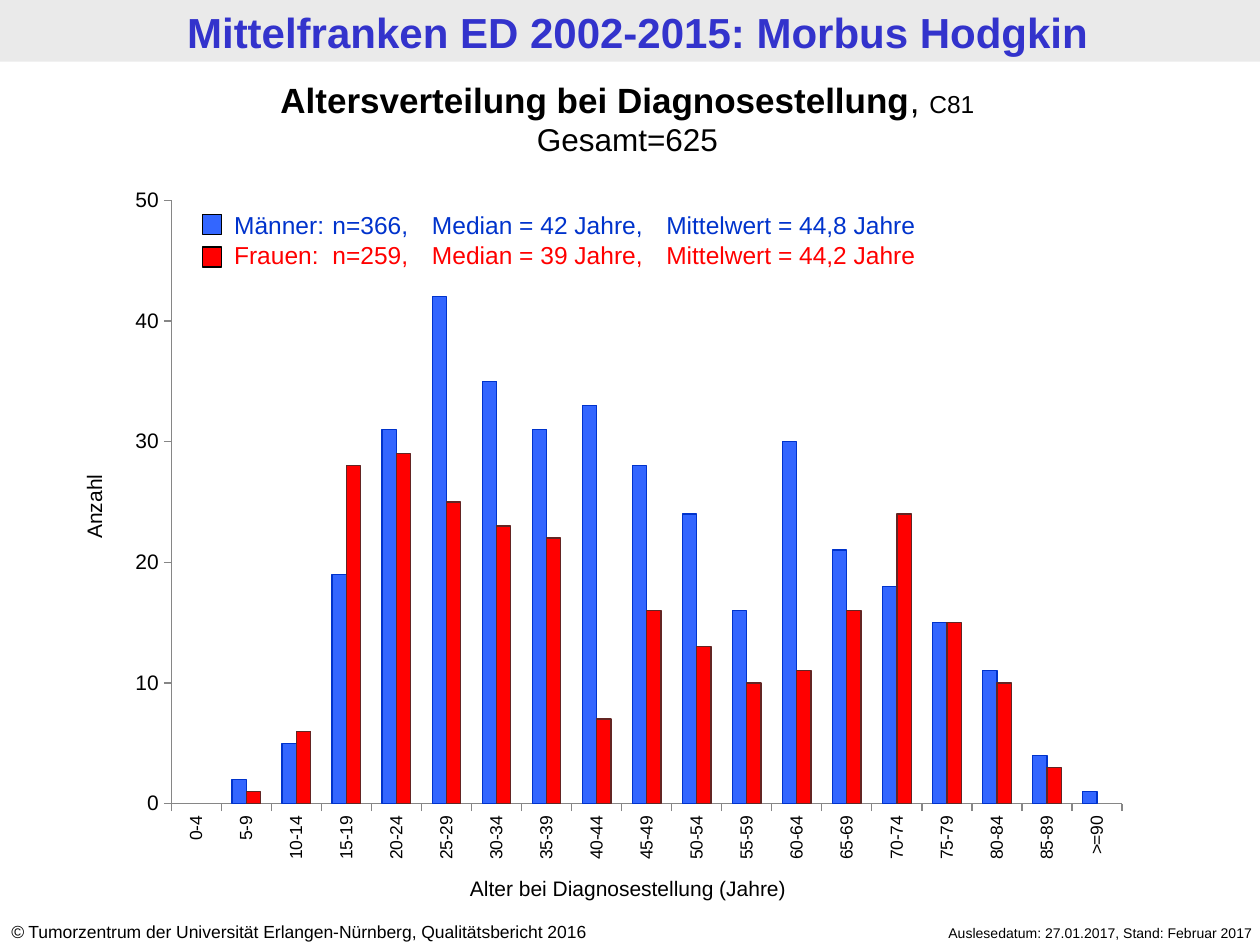
"""Build the slide on the age distribution at diagnosis of Morbus Hodgkin."""
import pptx
import pptx.chart.data
import pptx.dml.color
import pptx.enum.chart
import pptx.enum.shapes
import pptx.enum.text
import pptx.oxml
import pptx.oxml.ns
import pptx.util

Inches, Pt = pptx.util.Inches, pptx.util.Pt
ALIGN = pptx.enum.text.PP_ALIGN
BLUE, RED, BLACK = "3366FF", "FF0000", "000000"


def rgb(value):
    return pptx.dml.color.RGBColor.from_string(value)


def write(sp, box, paragraphs, align=ALIGN.LEFT):
    sp.left, sp.top, sp.width, sp.height = [Inches(v) for v in box]
    tf = sp.text_frame
    tf.word_wrap = True
    tf.auto_size = pptx.enum.text.MSO_AUTO_SIZE.NONE
    tf.vertical_anchor = pptx.enum.text.MSO_ANCHOR.TOP
    for i, runs in enumerate(paragraphs):
        p = tf.add_paragraph() if i else tf.paragraphs[0]
        p.alignment = align
        for text, size, color, bold, italic in runs:
            r = p.add_run()
            r.text = text
            r.font.name, r.font.size = "Arial", Pt(size)
            r.font.bold, r.font.italic = bold, italic
            r.font.color.rgb = rgb(color)
    return sp


prs = pptx.Presentation()
prs.slide_width, prs.slide_height = Inches(10), Inches(7.5)
s = prs.slides.add_slide(prs.slide_layouts[5])

band = s.shapes.add_shape(pptx.enum.shapes.MSO_SHAPE.RECTANGLE, 0, 0, prs.slide_width, Inches(0.49))
band.shadow.inherit = False
band.fill.solid()
band.fill.fore_color.rgb = rgb("EAEAEA")
band.line.fill.background()
s.shapes.title._element.addprevious(band._element)

title = write(s.shapes.title, (0.06, 0.01, 10, 0.49),
              [[("Mittelfranken ED 2002-2015: Morbus Hodgkin", 24, "3333CC", True, False)]], ALIGN.CENTER)
title.text_frame.margin_top = title.text_frame.margin_bottom = Inches(0.04)

labels = [
    ((-0.01, 7.26, 5.24, 0.27), ALIGN.LEFT, 0, [
        [("©", 10, BLACK, False, True),
         (" Tumorzentrum der Universität Erlangen-Nürnberg, Qualitätsbericht 2016", 10, BLACK, False, False)]]),
    ((6.65, 7.29, 3.39, 0.24), ALIGN.RIGHT, 0, [
        [("Auslesedatum: 27.01.2017, Stand: Februar 2017", 8, BLACK, False, False)]]),
    ((-0.04, 0.57, 10.04, 0.74), ALIGN.CENTER, 0, [
        [("Altersverteilung bei Diagnosestellung", 20, BLACK, True, False),
         (", ", 20, BLACK, False, False), ("C81", 14, BLACK, False, False)],
        [("Gesamt=625", 18, BLACK, False, False)]]),
    ((3.45, 6.9, 3.07, 0.3), ALIGN.CENTER, 0, [
        [("Alter bei Diagnosestellung (Jahre)", 12, BLACK, False, False)]]),
    ((-0.56, 3.87, 2.61, 0.3), ALIGN.CENTER, 270, [[("Anzahl", 12, BLACK, False, False)]]),
]
for box, align, rotation, paragraphs in labels:
    sp = write(s.shapes.add_textbox(0, 0, 0, 0), box, paragraphs, align)
    sp.rotation = rotation

data = pptx.chart.data.CategoryChartData()
data.categories = [f"{age}-{age + 4}" for age in range(0, 90, 5)] + [">=90"]
data.add_series("Männer", [None, 2, 5, 19, 31, 42, 35, 31, 33, 28, 24, 16, 30, 21, 18, 15, 11, 4, 1])
data.add_series("Frauen", [None, 1, 6, 28, 29, 25, 23, 22, 7, 16, 13, 10, 11, 16, 24, 15, 10, 3, None])
chart = s.shapes.add_chart(pptx.enum.chart.XL_CHART_TYPE.COLUMN_CLUSTERED, Inches(0.91), Inches(1.39),
                           Inches(8.16), Inches(5.55), data).chart
chart.has_legend = chart.has_title = False
chart.font.name, chart.font.size = "Calibri", Pt(18)
chart.font.color.rgb = rgb(BLACK)
plot = chart.plots[0]
plot.gap_width, plot.overlap, plot.vary_by_categories = 150, 0, False
for series, fill, line in zip(plot.series, (BLUE, RED), ("0033CC", "632523")):
    series.format.fill.solid()
    series.format.fill.fore_color.rgb = rgb(fill)
    series.format.line.color.rgb = rgb(line)
    series.format.line.width = Pt(0.75)

for axis, size in ((chart.category_axis, 10), (chart.value_axis, 12)):
    axis.has_major_gridlines = False
    axis.major_tick_mark = pptx.enum.chart.XL_TICK_MARK.OUTSIDE
    axis.format.line.color.rgb = rgb("868686")
    axis.format.line.width = Pt(0.75)
    axis.tick_labels.font.name, axis.tick_labels.font.size = "Arial", Pt(size)
    axis.tick_labels.font.color.rgb = rgb(BLACK)
chart.value_axis.minimum_scale, chart.value_axis.maximum_scale = 0, 50
chart.value_axis.major_unit = 10
body = chart.category_axis._element.find(".//" + pptx.oxml.ns.qn("a:bodyPr"))
body.set("rot", "-5400000")
body.set("vert", "horz")

area = chart._chartSpace.chart.plotArea
for old in area.findall(pptx.oxml.ns.qn("c:layout")):
    area.remove(old)
places = "".join(f'<c:{tag} val="{val}"/>' for tag, val in (
    ("layoutTarget", "inner"), ("xMode", "edge"), ("yMode", "edge"),
    ("x", 0.055), ("y", 0.036), ("w", 0.925), ("h", 0.863)))
area.insert(0, pptx.oxml.parse_xml(
    f'<c:layout {pptx.oxml.ns.nsdecls("c")}><c:manualLayout>{places}</c:manualLayout></c:layout>'))

key = write(s.shapes.add_textbox(0, 0, 0, 0), (1.76, 1.62, 6.85, 0.57), [
    [("Männer: \tn=366, \tMedian = 42 Jahre, \tMittelwert = 44,8 Jahre", 14, "0033CC", False, False)],
    [("Frauen: \tn=259, \tMedian = 39 Jahre,\tMittelwert = 44,2 Jahre", 14, RED, False, False)]])
for p in key.text_frame.paragraphs:
    stops = "".join(f'<a:tab pos="{Inches(pos)}" algn="l"/>' for pos in (0.78, 1.57, 3.43))
    p._p.get_or_add_pPr().append(pptx.oxml.parse_xml(
        f'<a:tabLst {pptx.oxml.ns.nsdecls("a")}>{stops}</a:tabLst>'))

for row, color in enumerate((BLUE, RED)):
    sp = s.shapes.add_shape(pptx.enum.shapes.MSO_SHAPE.RECTANGLE, Inches(1.61), Inches(1.7 + 0.26 * row),
                            Inches(0.15), Inches(0.16))
    sp.shadow.inherit = False
    sp.fill.solid()
    sp.fill.fore_color.rgb = rgb(color)
    sp.line.color.rgb = rgb(BLACK)
    sp.line.width = Pt(0.75)

prs.save("out.pptx")
